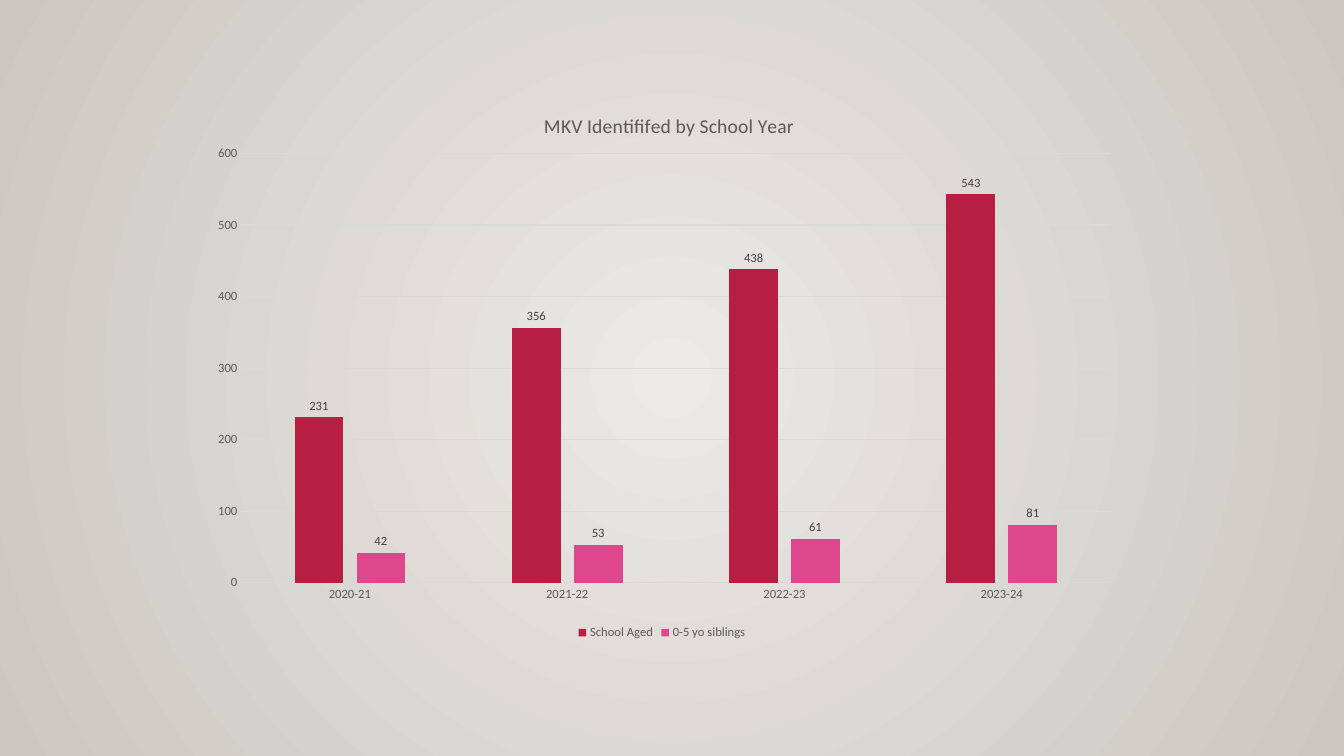
"""Build a slide with a clustered column chart of MKV counts by school year."""
from lxml import etree
from pptx import Presentation
from pptx.chart.data import CategoryChartData
from pptx.dml.color import RGBColor
from pptx.enum import chart as kinds
from pptx.oxml import parse_xml
from pptx.oxml.ns import nsdecls, qn
from pptx.util import Inches, Pt

TITLE = "MKV Identififed by School Year"
YEARS = ["2020-21", "2021-22", "2022-23", "2023-24"]
SERIES = [
    ("School Aged", (231, 356, 438, 543), "school"),
    ("0-5 yo siblings", (42, 53, 61, 81), "siblings"),
]
COLORS = {
    "center": "ECEAE7", "edge": "CAC7C1", "school": "B71E42",
    "siblings": "DE478E", "text": "595959", "label": "404040", "grid": "D9D9D9",
}
CHART_BOX = [Inches(n) for n in (1.93, 0.86, 9.27, 5.53)]
PLOT_LAYOUT = {"x": 0.05, "y": 0.12, "w": 0.93, "h": 0.77}
TITLE_LAYOUT = {"x": 0.37, "y": 0.04}


def color(name):
    return RGBColor.from_string(COLORS[name])


def style_font(font, size, name):
    font.name, font.size, font.bold = "Calibri", Pt(size), False
    font.color.rgb = color(name)


def style_line(line):
    line.color.rgb = color("grid")
    line.width = Pt(0.75)


def set_background(page):
    stops = "".join(
        f'<a:gs pos="{position}"><a:srgbClr val="{COLORS[name]}"/></a:gs>'
        for position, name in ((0, "center"), (100000, "edge")))
    page.element.cSld.insert(0, parse_xml(
        f'<p:bg {nsdecls("p", "a")}><p:bgPr><a:gradFill rotWithShape="1">'
        f'<a:gsLst>{stops}</a:gsLst><a:path path="circle">'
        '<a:fillToRect l="50000" t="50000" r="50000" b="50000"/></a:path>'
        '</a:gradFill><a:effectLst/></p:bgPr></p:bg>'))


def set_layout(parent, index, fractions):
    layout = parent.find(qn("c:layout"))
    if layout is None:
        layout = parent.makeelement(qn("c:layout"))
        parent.insert(index, layout)
    manual = etree.SubElement(layout, qn("c:manualLayout"))
    settings = {"layoutTarget": "inner"} if "w" in fractions else {}
    settings.update(xMode="edge", yMode="edge", **fractions)
    for tag, value in settings.items():
        etree.SubElement(manual, qn(f"c:{tag}")).set("val", str(value))


def add_chart(page):
    data = CategoryChartData()
    data.categories = YEARS
    for name, values, _ in SERIES:
        data.add_series(name, values)
    chart = page.shapes.add_chart(
        kinds.XL_CHART_TYPE.COLUMN_CLUSTERED, *CHART_BOX, data).chart
    style_font(chart.font, 10, "text")

    chart.has_title = True
    title = chart.chart_title
    title.include_in_layout = False
    title.text_frame.text = TITLE
    style_font(title.text_frame.paragraphs[0].runs[0].font, 14, "text")
    set_layout(title._element, 1, TITLE_LAYOUT)

    chart.has_legend = True
    chart.legend.position = kinds.XL_LEGEND_POSITION.BOTTOM
    chart.legend.include_in_layout = False
    style_font(chart.legend.font, 9, "text")

    for axis in (chart.category_axis, chart.value_axis):
        axis.major_tick_mark = axis.minor_tick_mark = kinds.XL_TICK_MARK.NONE
        style_font(axis.tick_labels.font, 9, "text")
    style_line(chart.category_axis.format.line)
    values_axis = chart.value_axis
    values_axis.minimum_scale, values_axis.maximum_scale = 0, 600
    values_axis.major_unit = 100
    values_axis.format.line.fill.background()
    style_line(values_axis.major_gridlines.format.line)

    plot = chart.plots[0]
    plot.gap_width, plot.overlap, plot.vary_by_categories = 219, -27, False
    for series, (_, _, name) in zip(plot.series, SERIES):
        series.format.fill.solid()
        series.format.fill.fore_color.rgb = color(name)
        labels = series.data_labels
        labels.show_value = True
        labels.position = kinds.XL_LABEL_POSITION.OUTSIDE_END
        style_font(labels.font, 9, "label")
    set_layout(chart._chartSpace.chart.plotArea, 0, PLOT_LAYOUT)


def main():
    deck = Presentation()
    deck.slide_width, deck.slide_height = Inches(13.33), Inches(7.5)
    page = deck.slides.add_slide(deck.slide_layouts[6])
    set_background(page)
    add_chart(page)
    deck.save("out.pptx")


if __name__ == "__main__":
    main()
